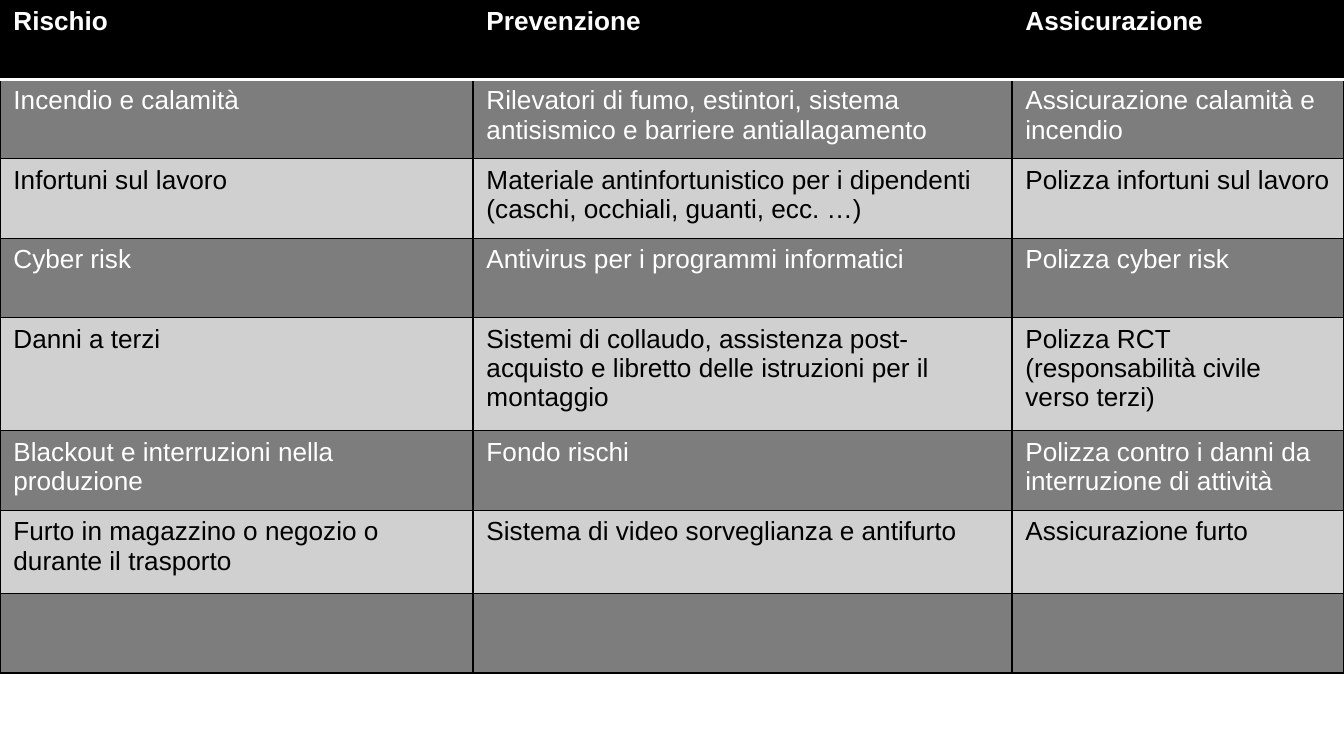
from lxml import etree
from pptx import Presentation
from pptx.dml.color import RGBColor
from pptx.oxml import ns
from pptx.util import Inches, Pt

BLACK = RGBColor(0x00, 0x00, 0x00)
WHITE = RGBColor(0xFF, 0xFF, 0xFF)
DARK_GREY = RGBColor(0x7D, 0x7D, 0x7D)
LIGHT_GREY = RGBColor(0xD0, 0xD0, 0xD0)

COLUMN_WIDTHS = (3.52, 4.01, 2.47)
ROW_HEIGHTS = (0.59, 0.59, 0.59, 0.59, 0.84, 0.59, 0.62, 0.59)
RISKS = (
    ("Rischio", "Prevenzione", "Assicurazione"),
    ("Incendio e calamità",
     "Rilevatori di fumo, estintori, sistema antisismico e barriere antiallagamento",
     "Assicurazione calamità e incendio"),
    ("Infortuni sul lavoro",
     "Materiale antinfortunistico per i dipendenti (caschi, occhiali, guanti, ecc. …)",
     "Polizza infortuni sul lavoro"),
    ("Cyber risk", "Antivirus per i programmi informatici", "Polizza cyber risk"),
    ("Danni a terzi",
     "Sistemi di collaudo, assistenza post- acquisto e libretto delle istruzioni per il montaggio",
     "Polizza RCT (responsabilità civile verso terzi)"),
    ("Blackout e interruzioni nella produzione", "Fondo rischi",
     "Polizza contro i danni da interruzione di attività"),
    ("Furto in magazzino o negozio o durante il trasporto",
     "Sistema di video sorveglianza e antifurto", "Assicurazione furto"),
    ("", "", ""),
)


def row_style(row):
    """Return the fill and the font format of a table row."""
    if row == 0:
        fill, ink = BLACK, WHITE
    elif row % 2:
        fill, ink = DARK_GREY, WHITE
    else:
        fill, ink = LIGHT_GREY, BLACK
    return fill, ink, {"name": "Arial", "size": Pt(14), "bold": row == 0}


def add_borders(cell, row):
    """Thin black grid, with a thicker white rule below the header."""
    grid, rule = (BLACK, 0.75), (WHITE, 2)
    sides = {
        "L": grid,
        "R": grid,
        "T": rule if row == 1 else grid,
        "B": rule if row == 0 else grid,
    }
    properties = cell._tc.get_or_add_tcPr()
    for side, (color, width) in sides.items():
        line = etree.SubElement(properties, ns.qn(f"a:ln{side}"), w=str(Pt(width)))
        fill = etree.SubElement(line, ns.qn("a:solidFill"))
        etree.SubElement(fill, ns.qn("a:srgbClr"), val=str(color))


def fill_cell(cell, wording, row):
    fill, ink, font_format = row_style(row)
    add_borders(cell, row)
    cell.fill.solid()
    cell.fill.fore_color.rgb = fill
    if wording:
        run = cell.text_frame.paragraphs[0].add_run()
        run.text = wording
        for attribute, value in font_format.items():
            setattr(run.font, attribute, value)
        run.font.color.rgb = ink


def add_risk_table(slide, left, top, width, height):
    risk_table = slide.shapes.add_table(
        len(RISKS), len(COLUMN_WIDTHS),
        Inches(left), Inches(top), Inches(width), Inches(height)).table
    risk_table.first_row = False
    risk_table.horz_banding = False

    # Column and row sizes, scaled to the box
    for column, share in zip(risk_table.columns, COLUMN_WIDTHS):
        column.width = Inches(width * share / sum(COLUMN_WIDTHS))
    for table_row, share in zip(risk_table.rows, ROW_HEIGHTS):
        table_row.height = Inches(height * share / sum(ROW_HEIGHTS))

    # Wording and look of each cell
    for row, entries in enumerate(RISKS):
        for column, wording in enumerate(entries):
            fill_cell(risk_table.cell(row, column), wording, row)


def main():
    deck = Presentation()
    # Widescreen, 16 to 9
    deck.slide_width = Inches(10)
    deck.slide_height = deck.slide_width * 9 // 16
    slide = deck.slides.add_slide(deck.slide_layouts[6])
    add_risk_table(slide, 0, 0, 10, 5.01)
    deck.save("out.pptx")


if __name__ == "__main__":
    main()
